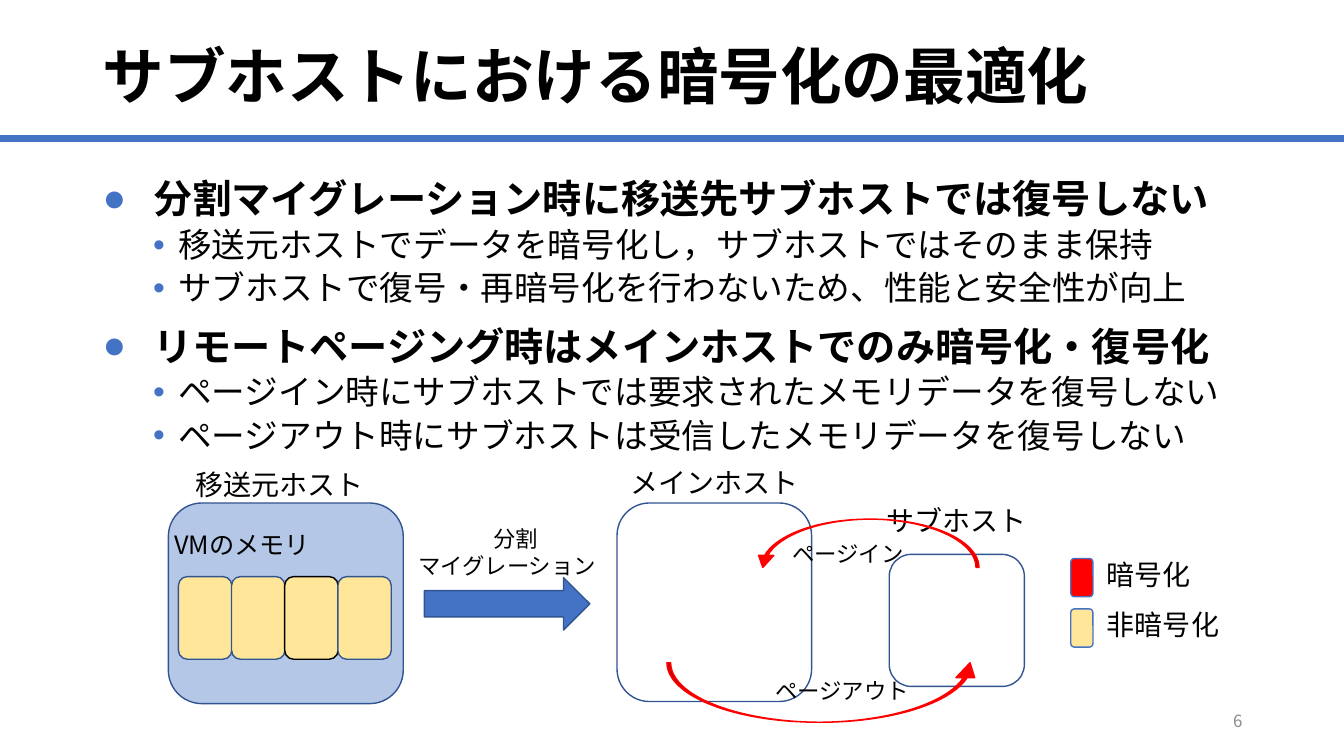
from dataclasses import dataclass

from lxml.etree import SubElement
from pptx import Presentation
from pptx.dml.color import RGBColor
from pptx.enum.shapes import MSO_CONNECTOR, MSO_SHAPE as Preset
from pptx.enum.text import MSO_ANCHOR as Anchor, PP_ALIGN as Align
from pptx.oxml.ns import qn
from pptx.util import Inches, Pt


@dataclass(frozen=True)
class Theme:
    """Colours, fonts and type sizes of the slide."""
    black: str = "000000"
    white: str = "FFFFFF"
    gray: str = "8C8C8C"
    accent: str = "4472C4"
    outline: str = "325491"
    host: str = "B4C7E7"
    plain: str = "FFE699"
    encrypted: str = "FF0000"
    heading_font: str = "Arial"
    label_font: str = "Noto Sans CJK JP"
    title: int = 44
    point: int = 28
    detail: int = 24
    label: int = 20
    memory: int = 18
    caption: int = 16
    number: int = 12


THEME = Theme()

POINTS = [
    ("分割マイグレーション時に移送先サブホストでは復号しない",
     ["移送元ホストでデータを暗号化し，サブホストではそのまま保持",
      "サブホストで復号・再暗号化を行わないため、性能と安全性が向上"]),
    ("リモートページング時はメインホストでのみ暗号化・復号化",
     ["ページイン時にサブホストでは要求されたメモリデータを復号しない",
      "ページアウト時にサブホストは受信したメモリデータを復号しない"]),
]


def inches(box):
    """Convert a left, top, width, height box to lengths."""
    return [Inches(value) for value in box]


def add_run(paragraph, words, size, font, color=THEME.black, bold=False):
    """Append one styled run, with the same face for Japanese text."""
    run = paragraph.add_run()
    run.text = words
    run.font.size = Pt(size)
    run.font.bold = bold
    run.font.name = font
    run.font.color.rgb = RGBColor.from_string(color)
    SubElement(run.font._element, qn("a:ea")).set("typeface", font)


def add_frame(slide, box, anchor=Anchor.TOP, wrap=True):
    """Add an empty text box and return its text frame."""
    frame = slide.shapes.add_textbox(*inches(box)).text_frame
    frame.word_wrap = wrap
    frame.vertical_anchor = anchor
    return frame


def add_label(slide, box, words, size=THEME.label, wrap=False):
    """Add a one-line label of the diagram."""
    paragraph = add_frame(slide, box, wrap=wrap).paragraphs[0]
    add_run(paragraph, words, size, THEME.label_font)


def add_bullet(paragraph, mark, left, hanging):
    """Give a paragraph a coloured bullet and a hanging indent."""
    props = paragraph._p.get_or_add_pPr()
    props.set("marL", str(Inches(left)))
    props.set("indent", str(-Inches(hanging)))
    color = SubElement(props, qn("a:buClr"))
    SubElement(color, qn("a:srgbClr")).set("val", THEME.accent)
    SubElement(props, qn("a:buFont")).set("typeface", THEME.heading_font)
    SubElement(props, qn("a:buChar")).set("char", mark)


def add_preset(slide, preset, box, fill, line=THEME.outline):
    """Add a filled and outlined preset shape."""
    shape = slide.shapes.add_shape(preset, *inches(box))
    shape.shadow.inherit = False
    shape.fill.solid()
    shape.fill.fore_color.rgb = RGBColor.from_string(fill)
    shape.line.color.rgb = RGBColor.from_string(line)
    shape.line.width = Pt(1)
    return shape


def add_paging_arrow(slide, box, rotation):
    """Add a thin curved red arrow between the hosts."""
    arrow = add_preset(slide, Preset.CURVED_RIGHT_ARROW, box,
                       THEME.encrypted, THEME.encrypted)
    arrow.rotation = rotation
    for index, value in enumerate((0.063, 0.315, 0.25)):
        arrow.adjustments[index] = value


def add_header(slide):
    """Add the rule, the title and the slide number."""
    rule = slide.shapes.add_connector(
        MSO_CONNECTOR.STRAIGHT, *inches((0, 1.37, 13.33, 1.37)))
    rule.line.color.rgb = RGBColor.from_string(THEME.accent)
    rule.line.width = Pt(5)
    SubElement(rule._element.spPr, qn("a:effectLst"))
    title = add_frame(slide, (0.92, 0.07, 11.5, 1.44), Anchor.MIDDLE).paragraphs[0]
    title.line_spacing = 0.9
    add_run(title, "サブホストにおける暗号化の最適化", THEME.title,
            THEME.heading_font, bold=True)
    number = add_frame(slide, (9.42, 6.95, 3, 0.4), Anchor.MIDDLE).paragraphs[0]
    number.alignment = Align.RIGHT
    add_run(number, "6", THEME.number, THEME.label_font, THEME.gray)


def add_points(slide):
    """Add the bold points and their details."""
    frame = add_frame(slide, (0.92, 1.68, 11.5, 5.07))
    for index, (point, details) in enumerate(POINTS):
        paragraph = frame.add_paragraph() if index else frame.paragraphs[0]
        paragraph.space_before = Pt(10)
        add_bullet(paragraph, "●", 0.5, 0.5)
        add_run(paragraph, point, THEME.point, THEME.heading_font, bold=True)
        for detail in details:
            paragraph = frame.add_paragraph()
            paragraph.level = 1
            paragraph.line_spacing = 0.9
            paragraph.space_before = Pt(5)
            add_bullet(paragraph, "•", 0.75, 0.25)
            add_run(paragraph, detail, THEME.detail, THEME.heading_font)


def add_source_host(slide):
    """Add the source host with its memory pages."""
    add_preset(slide, Preset.ROUNDED_RECTANGLE, (1.67, 4.99, 2.33, 1.99), THEME.host)
    add_label(slide, (1.84, 4.59, 1.88, 0.44), "移送元ホスト", wrap=True)
    add_label(slide, (1.63, 5.2, 1.61, 0.4), "VMのメモリ", THEME.memory)
    page_lines = (THEME.outline, THEME.outline, THEME.black, THEME.outline)
    for index, line in enumerate(page_lines):
        add_preset(slide, Preset.ROUNDED_RECTANGLE,
                   (1.77 + 0.527 * index, 5.72, 0.53, 0.82), THEME.plain, line)


def add_migration(slide):
    """Add the migration arrow and its caption."""
    add_preset(slide, Preset.RIGHT_ARROW, (4.21, 5.73, 1.64, 0.52), THEME.accent)
    frame = add_frame(slide, (4.05, 5.16, 2.13, 0.64))
    first, second = frame.paragraphs[0], frame.add_paragraph()
    first.alignment = Align.CENTER
    add_run(first, "分割", THEME.caption, THEME.label_font)
    add_run(second, "マイグレーション", THEME.caption, THEME.label_font)


def add_destination_hosts(slide):
    """Add the main and sub hosts with the paging between them."""
    for box in ((6.12, 4.99, 1.93, 1.97), (8.82, 5.5, 1.34, 1.31)):
        add_preset(slide, Preset.ROUNDED_RECTANGLE, box, THEME.white)
    add_label(slide, (6.15, 4.57, 1.88, 0.44), "メインホスト", wrap=True)
    add_label(slide, (8.69, 4.95, 1.6, 0.44), "サブホスト")
    add_label(slide, (7.76, 5.31, 1.34, 0.37), "ページイン", THEME.caption, wrap=True)
    add_paging_arrow(slide, (8.36, 4.28, 0.48, 2.22), 90)
    add_paging_arrow(slide, (7.87, 5.32, 0.59, 3.1), 270)
    add_label(slide, (7.59, 6.67, 1.55, 0.37), "ページアウト", THEME.caption)


def add_legend(slide):
    """Add the key of the page colours."""
    entries = (("暗号化", THEME.encrypted, 1.04), ("非暗号化", THEME.plain, 1.32))
    for index, (words, fill, width) in enumerate(entries):
        top = 5.48 + 0.5 * index
        add_label(slide, (10.88, top, width, 0.44), words)
        add_preset(slide, Preset.ROUNDED_RECTANGLE,
                   (10.62, top + 0.06, 0.22, 0.38), fill, THEME.accent)


def main():
    """Build the slide and save it."""
    deck = Presentation()
    deck.slide_width, deck.slide_height = Inches(13.33), Inches(7.5)
    slide = deck.slides.add_slide(deck.slide_layouts[6])
    add_header(slide)
    add_points(slide)
    add_source_host(slide)
    add_migration(slide)
    add_destination_hosts(slide)
    add_legend(slide)
    deck.save("out.pptx")


main()
